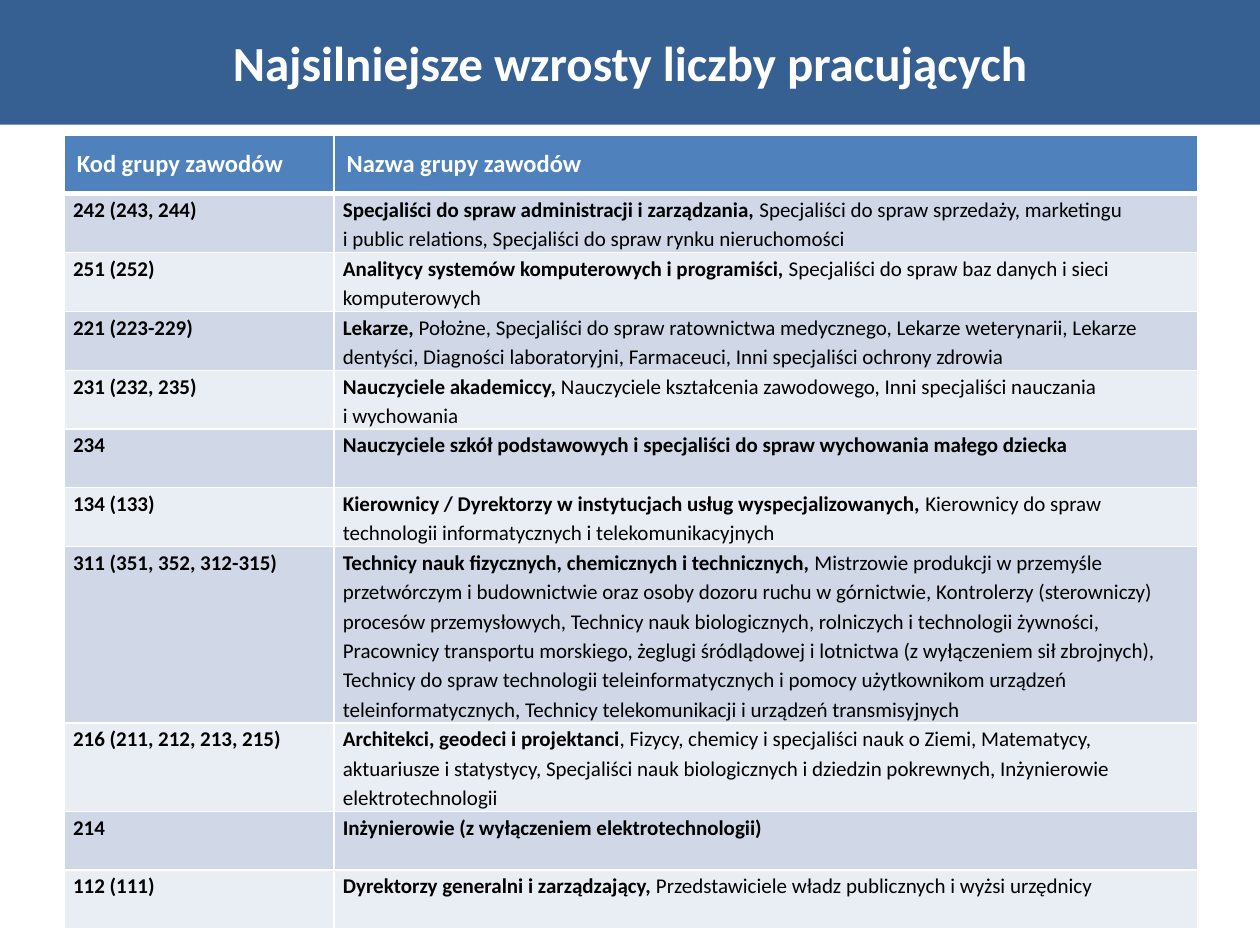
from lxml import etree
from pptx import Presentation
from pptx import util as u
from pptx.dml.color import RGBColor
from pptx.enum import shapes, text
from pptx.oxml.ns import qn

W, H = u.Inches(10), u.Inches(7.5)
COLORS = {"banner": "376092", "head": "4F81BD", "odd": "D0D8E8",
          "even": "E9EDF4", "white": "FFFFFF", "black": "000000"}
HEADERS = ("Kod grupy zawodów", "Nazwa grupy zawodów")
GROUPS = [
    ("242 (243, 244)", "Specjaliści do spraw administracji i zarządzania,",
     " Specjaliści do spraw sprzedaży, marketingu \n"
     "i public relations, Specjaliści do spraw rynku nieruchomości", 2),
    ("251 (252)", "Analitycy systemów komputerowych i programiści,",
     " Specjaliści do spraw baz danych i sieci komputerowych", 2),
    ("221 (223-229)", "Lekarze,",
     " Położne, Specjaliści do spraw ratownictwa medycznego, Lekarze weterynarii, "
     "Lekarze dentyści, Diagności laboratoryjni, Farmaceuci, "
     "Inni specjaliści ochrony zdrowia", 2),
    ("231 (232, 235)", "Nauczyciele akademiccy,",
     " Nauczyciele kształcenia zawodowego, Inni specjaliści nauczania \n"
     "i wychowania", 2),
    ("234", "Nauczyciele szkół podstawowych i specjaliści do spraw "
     "wychowania małego dziecka", "", 2),
    ("134 (133)", "Kierownicy / Dyrektorzy w instytucjach usług wyspecjalizowanych,",
     " Kierownicy do spraw technologii informatycznych i telekomunikacyjnych", 2),
    ("311 (351, 352, 312-315)", "Technicy nauk fizycznych, chemicznych i technicznych,",
     " Mistrzowie produkcji w przemyśle przetwórczym i budownictwie oraz osoby "
     "dozoru ruchu w górnictwie, Kontrolerzy (sterowniczy) procesów przemysłowych, "
     "Technicy nauk biologicznych, rolniczych i technologii żywności, Pracownicy "
     "transportu morskiego, żeglugi śródlądowej i lotnictwa (z wyłączeniem sił "
     "zbrojnych), Technicy do spraw technologii teleinformatycznych i pomocy "
     "użytkownikom urządzeń teleinformatycznych, Technicy telekomunikacji "
     "i urządzeń transmisyjnych", 6),
    ("216 (211, 212, 213, 215)", "Architekci, geodeci i projektanci",
     ", Fizycy, chemicy i specjaliści nauk o Ziemi, Matematycy, aktuariusze "
     "i statystycy, Specjaliści nauk biologicznych i dziedzin pokrewnych, "
     "Inżynierowie elektrotechnologii", 3),
    ("214", "Inżynierowie (z wyłączeniem elektrotechnologii)", "", 2),
    ("112 (111)", "Dyrektorzy generalni i zarządzający,",
     " Przedstawiciele władz publicznych i wyżsi urzędnicy", 2),
]


def rgb(name):
    """Return the named palette colour."""
    return RGBColor.from_string(COLORS[name])


def write(p, content, size=12, color="black", bold=True):
    """Append formatted text to a paragraph, breaking at newlines."""
    for i, line in enumerate(content.split("\n")):
        if i:
            p.add_line_break()
        r = p.add_run()
        r.text = line
        r.font.name, r.font.size, r.font.bold = "Calibri", u.Pt(size), bold
        r.font.color.rgb = rgb(color)


def style_cell(cell, fill, bottom=1, top=1):
    """Give a cell white borders and a solid fill."""
    pr = cell._tc.get_or_add_tcPr()
    for side, width in (("L", 1), ("R", 1), ("T", top), ("B", bottom)):
        ln = etree.SubElement(pr, qn(f"a:ln{side}"), w=str(u.Pt(width)))
        solid = etree.SubElement(ln, qn("a:solidFill"))
        etree.SubElement(solid, qn("a:srgbClr"), val=COLORS["white"])
    cell.fill.solid()
    cell.fill.fore_color.rgb = rgb(fill)


def add_banner(s, x, y, w, h):
    """Place the title band in the given box."""
    sp = s.shapes.add_shape(shapes.MSO_SHAPE.RECTANGLE, x, y, w, h)
    sp.shadow.inherit = False
    sp.fill.solid()
    sp.fill.fore_color.rgb = rgb("banner")
    sp.line.fill.background()
    tf = sp.text_frame
    tf.word_wrap = True
    tf.vertical_anchor = text.MSO_ANCHOR.MIDDLE
    p = tf.paragraphs[0]
    p.alignment = text.PP_ALIGN.CENTER
    write(p, "Najsilniejsze wzrosty liczby pracujących", size=28, color="white")


def add_groups(s, x, y, w, h):
    """Place the table of occupation groups, its rows sized by line count."""
    lines = [2] + [group[3] for group in GROUPS]
    tbl = s.shapes.add_table(len(lines), 2, x, y, w, h).table
    code_w = int(w * 0.238)
    tbl.columns[0].width, tbl.columns[1].width = code_w, w - code_w
    for row, count in zip(tbl.rows, lines):
        row.height = int(h * count / sum(lines))
    for cell, label in zip(tbl.rows[0].cells, HEADERS):
        style_cell(cell, "head", bottom=3)
        cell.vertical_anchor = text.MSO_ANCHOR.MIDDLE
        write(cell.text_frame.paragraphs[0], label, size=14, color="white")
    for i, (code, lead, rest, _) in enumerate(GROUPS, 1):
        for cell, label in zip(tbl.rows[i].cells, (code, lead)):
            style_cell(cell, "odd" if i % 2 else "even", top=3 if i == 1 else 1)
            cell.margin_left = cell.margin_right = u.Inches(0.07)
            cell.margin_top = cell.margin_bottom = 0
            p = cell.text_frame.paragraphs[0]
            p.line_spacing = 1.15
            write(p, label)
        if rest:
            write(p, rest, bold=False)


def main():
    """Build and save the slide."""
    prs = Presentation()
    prs.slide_width, prs.slide_height = W, H
    s = prs.slides.add_slide(prs.slide_layouts[6])
    add_banner(s, 0, 0, W, int(H * 0.132))
    add_groups(s, int(W * 0.051), int(H * 0.143), int(W * 0.9), int(H * 0.836))
    prs.save("out.pptx")


if __name__ == "__main__":
    main()
